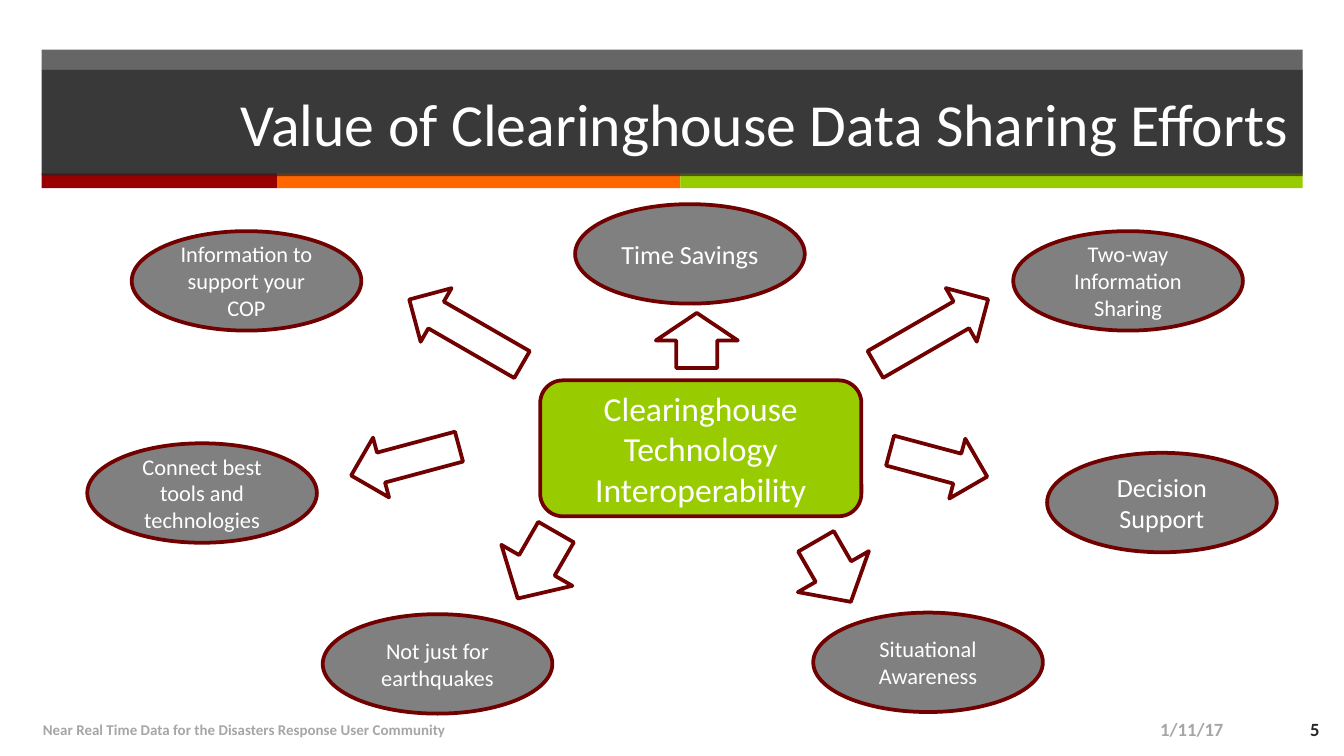
"""Build the slide on the value of clearinghouse data sharing efforts."""
import pptx
import pptx.util
import pptx.dml.color
import pptx.enum.shapes
import pptx.enum.text
import pptx.oxml
import pptx.oxml.ns

Cm, Pt = pptx.util.Cm, pptx.util.Pt
SHAPE = pptx.enum.shapes.MSO_SHAPE
ALIGN = pptx.enum.text.PP_ALIGN

THEME = {
    "font": "Calibri",
    "dark": "262626", "white": "FFFFFF", "muted": "A6A6A6",
    "hub": "99CC00", "hub_line": "730000",
    "benefit": "808080", "line": "710000",
    "strips": ("990000", "FF6600", "99CC00"),
    "title": 32, "hub_size": 18, "large": 14, "normal": 12,
    "footer": 8, "meta": 10,
    "line_width": 2, "header_alpha": 70,
}

TITLE = "Value of Clearinghouse Data Sharing Efforts"
HEADER_LEFT, HEADER_WIDTH = 0.79, 23.83
STRIP_TOP, STRIP_HEIGHT = 3.28, 0.28
STRIP_WIDTHS = (4.45, 7.62, 11.76)

HUB = ("Clearinghouse Technology Interoperability", (10.21, 7.19, 6.07, 2.57))

BENEFIT_SIZE = (4.34, 1.88)
BENEFITS = [
    ("Two-way Information Sharing", 19.15, 4.37, "normal"),
    ("Decision Support", 19.79, 8.56, "large"),
    ("Not just for earthquakes", 6.1, 11.61, "normal"),
    ("Connect best tools and technologies", 1.65, 8.38, "normal"),
    ("Information to support your COP", 2.49, 4.37, "normal"),
    ("Time Savings", 10.87, 3.86, "large"),
    ("Situational Awareness", 15.37, 11.58, "normal"),
]

ARROWS = [
    ((9.42, 9.91, 1.45, 1.55), 120),
    ((6.6, 8.13, 2.11, 1.17), 165),
    ((15.09, 10.03, 1.32, 1.55), 60),
    ((12.65, 5.66, 1.04, 1.55), 270),
    ((7.57, 5.69, 2.46, 1.17), 210),
    ((16.38, 5.69, 2.46, 1.17), 330),
    ((16.79, 8.18, 1.9, 1.17), 15),
]

FOOTER_TOP, FOOTER_HEIGHT = 13.41, 0.76
FOOTERS = [
    ("5", 23.44, 1.75, ALIGN.RIGHT, "meta", "dark"),
    ("Near Real Time Data for the Disasters Response User Community",
     0.56, 17.02, ALIGN.LEFT, "footer", "muted"),
    ("1/11/17", 17.45, 5.92, ALIGN.RIGHT, "meta", "muted"),
]


def rgb(color):
    return pptx.dml.color.RGBColor.from_string(color)


def paint(sp, color, alpha=None):
    sp.fill.solid()
    sp.fill.fore_color.rgb = rgb(color)
    if alpha is not None:
        clr = sp.element.spPr.find(".//" + pptx.oxml.ns.qn("a:srgbClr"))
        clr.append(pptx.oxml.parse_xml(
            f'<a:alpha {pptx.oxml.ns.nsdecls("a")} val="{alpha * 1000}"/>'))


def add_shape(s, kind, box, fill=None, line=None, alpha=None):
    sp = s.shapes.add_shape(kind, *map(Cm, box))
    sp.shadow.inherit = False
    if fill:
        paint(sp, fill, alpha)
    else:
        sp.fill.background()
    if line:
        sp.line.color.rgb = rgb(line)
        sp.line.width = Pt(THEME["line_width"])
    else:
        sp.line.fill.background()
    return sp


def write(sp, text, size, color="white", align=ALIGN.CENTER, bold=False):
    tf = sp.text_frame
    tf.text = text
    tf.word_wrap = True
    tf.auto_size = pptx.enum.text.MSO_AUTO_SIZE.NONE
    tf.vertical_anchor = pptx.enum.text.MSO_ANCHOR.MIDDLE
    p = tf.paragraphs[0]
    p.alignment = align
    font = p.runs[0].font
    font.name, font.size, font.bold = THEME["font"], Pt(THEME[size]), bold
    font.color.rgb = rgb(THEME[color])


def tighten(sp):
    tf = sp.text_frame
    tf.margin_left = tf.margin_right = Cm(0.23)
    tf.margin_top = tf.margin_bottom = Cm(0.1)


def add_header(s):
    add_shape(s, SHAPE.RECTANGLE, (HEADER_LEFT, 0.94, HEADER_WIDTH, 2.36),
              THEME["dark"], alpha=THEME["header_alpha"])
    left = HEADER_LEFT
    for width, color in zip(STRIP_WIDTHS, THEME["strips"]):
        add_shape(s, SHAPE.RECTANGLE, (left, STRIP_TOP, width, STRIP_HEIGHT), color)
        left += width
    title = s.shapes.title
    title.left, title.top = Cm(HEADER_LEFT), Cm(1.32)
    title.width, title.height = Cm(HEADER_WIDTH), Cm(2.01)
    paint(title, THEME["dark"], THEME["header_alpha"])
    write(title, TITLE, "title", align=ALIGN.RIGHT)
    title.element.getparent().append(title.element)


def add_diagram(s):
    text, box = HUB
    hub = add_shape(s, SHAPE.ROUNDED_RECTANGLE, box, THEME["hub"], THEME["hub_line"])
    write(hub, text, "hub_size")
    tighten(hub)
    for text, left, top, size in BENEFITS:
        sp = add_shape(s, SHAPE.OVAL, (left, top, *BENEFIT_SIZE),
                       THEME["benefit"], THEME["line"])
        write(sp, text, size)
        tighten(sp)
    for box, angle in ARROWS:
        add_shape(s, SHAPE.RIGHT_ARROW, box, line=THEME["line"]).rotation = angle


def add_footers(s):
    for text, left, width, align, size, color in FOOTERS:
        box = (left, FOOTER_TOP, width, FOOTER_HEIGHT)
        write(s.shapes.add_textbox(*map(Cm, box)), text, size, color, align, True)


def main():
    prs = pptx.Presentation()
    prs.slide_width, prs.slide_height = Cm(25.4), Cm(14.29)
    s = prs.slides.add_slide(prs.slide_layouts[5])
    add_header(s)
    add_diagram(s)
    add_footers(s)
    prs.save("out.pptx")


if __name__ == "__main__":
    main()
